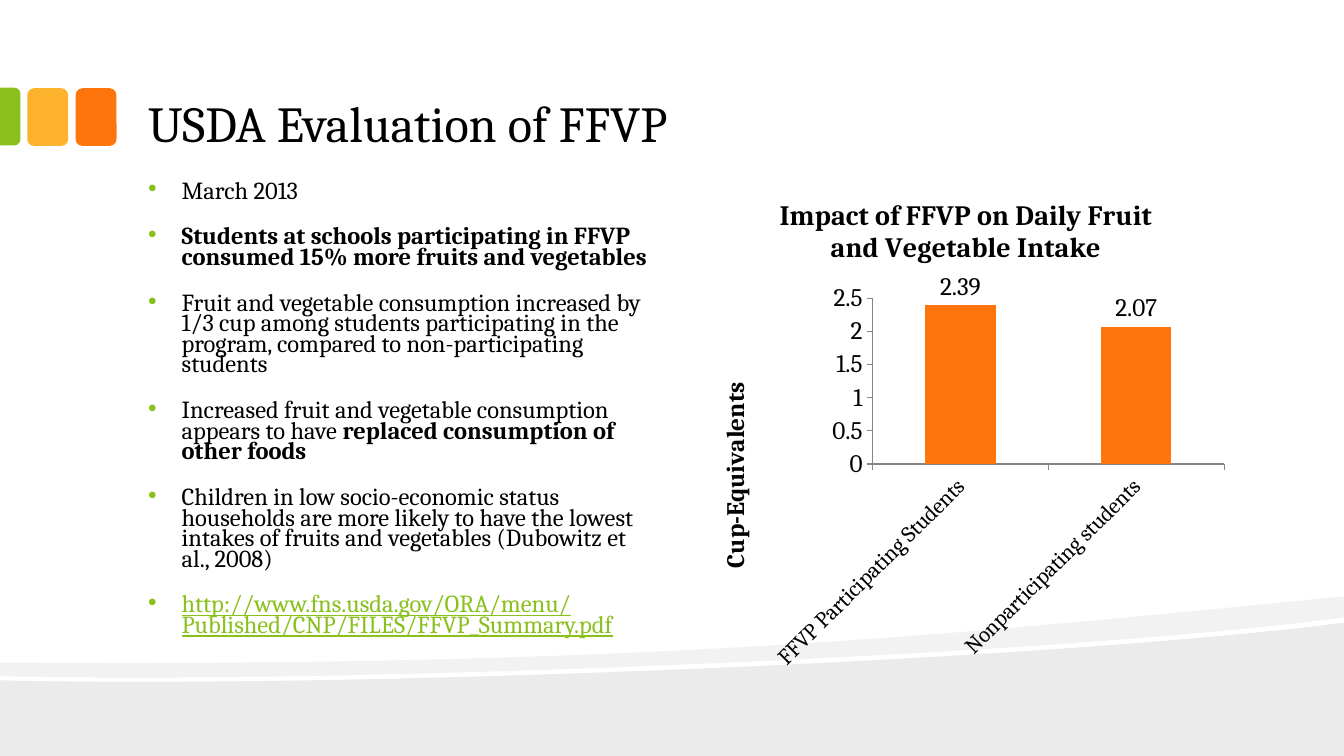
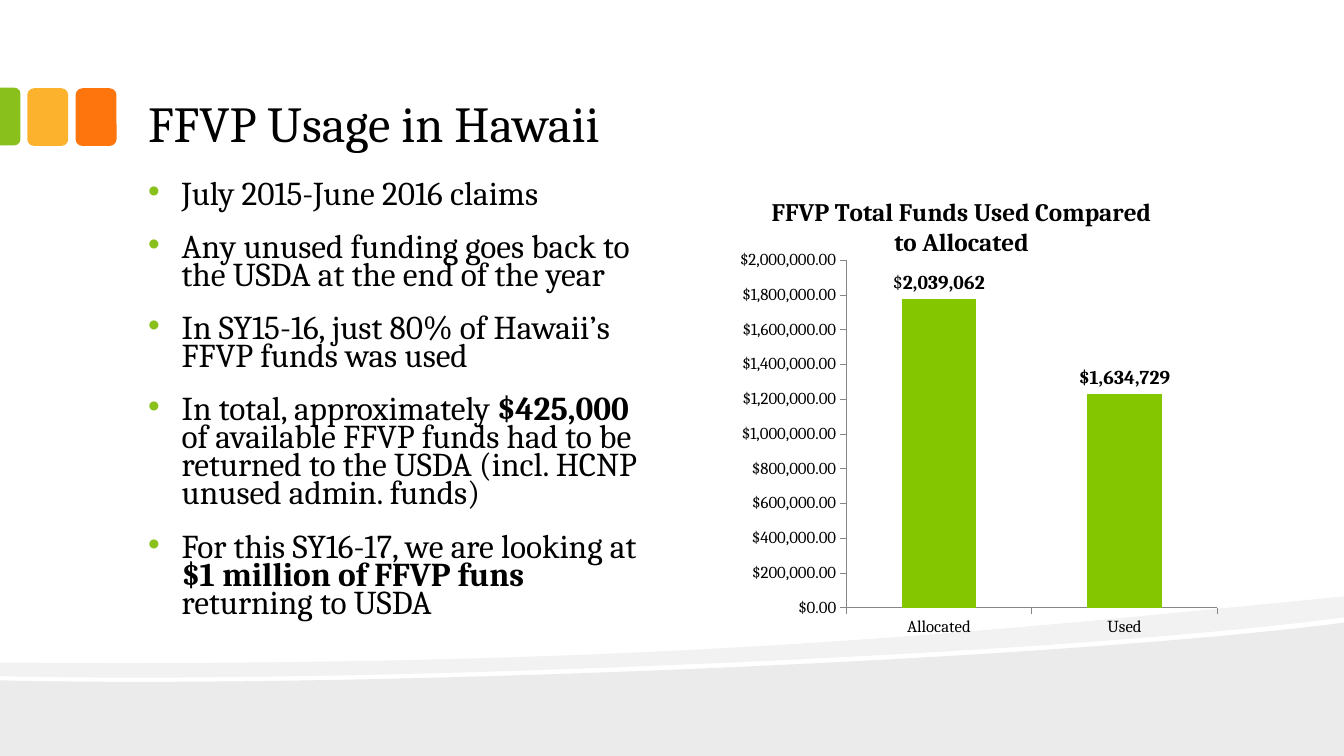
from dataclasses import dataclass

from lxml import etree
from pptx import Presentation, util as u
from pptx.chart.data import CategoryChartData
from pptx.dml.color import RGBColor
from pptx.enum import chart as ch, shapes, text
from pptx.oxml import ns


@dataclass(frozen=True)
class Theme:
    font: str = "Cambria"
    ink: str = "000000"
    axis: str = "868686"
    green: str = "89C01C"
    bright_green: str = "84C600"
    yellow: str = "FCB22C"
    orange: str = "FE750E"
    wave_dark: str = "EBEBEB"
    wave_light: str = "F2F2F2"
    title: float = 36
    chart_title: float = 20
    chart_text: float = 18


T = Theme()
BULLET_INDENT = 32


def px(n):
    return u.Emu(round(n * 9525))


def rgb(color):
    return RGBColor.from_string(color)


# Text
def set_font(font, *, size, color=T.ink, bold=False, underline=False):
    font.name, font.size = T.font, u.Pt(size)
    font.bold, font.underline = bold, underline
    font.color.rgb = rgb(color)


def write(p, content, *, bold=False, **style):
    """Fill a paragraph; parts between ** marks are bold."""
    for i, part in enumerate(content.split("**")):
        if part:
            r = p.add_run()
            r.text = part
            set_font(r.font, bold=bold or i % 2 == 1, **style)


def add_text_box(s, box, anchor):
    tf = s.shapes.add_textbox(*map(px, box)).text_frame
    tf.word_wrap = True
    tf.vertical_anchor = anchor
    tf.margin_left = tf.margin_right = px(13)
    tf.margin_top, tf.margin_bottom = px(6), px(7)
    return tf


def add_bullet(p):
    p.line_spacing, p.space_before = 0.7, u.Pt(18)
    pPr = p._p.get_or_add_pPr()
    pPr.set("marL", str(px(BULLET_INDENT)))
    pPr.set("indent", str(px(-BULLET_INDENT)))
    color = etree.SubElement(pPr, ns.qn("a:buClr"))
    etree.SubElement(color, ns.qn("a:srgbClr"), val=T.green)
    etree.SubElement(pPr, ns.qn("a:buFont"), typeface="Arial")
    etree.SubElement(pPr, ns.qn("a:buChar"), char="•")


def add_bullets(s, items, *, size, height):
    tf = add_text_box(s, (128, 168, 512, height), text.MSO_ANCHOR.TOP)
    for i, item in enumerate(items):
        p = tf.add_paragraph() if i else tf.paragraphs[0]
        add_bullet(p)
        link = item.startswith("http")
        write(p, item, size=size, color=T.green if link else T.ink, underline=link)


# Shared decoration
def paint(sp, color):
    sp.shadow.inherit = False
    sp.fill.solid()
    sp.fill.fore_color.rgb = rgb(color)
    sp.line.fill.background()


def add_wave(s, points, curve_starts, color):
    """Draw an outline; three segments from each curve start form one curve."""
    outline = s.shapes.build_freeform(*map(px, points[0]), scale=1.0)
    outline.add_line_segments([tuple(map(px, q)) for q in points[1:]], close=True)
    sp = outline.convert_to_shape()
    segments = list(sp._element.iter(ns.qn("a:lnTo")))
    for start in curve_starts:
        curve = etree.Element(ns.qn("a:cubicBezTo"))
        segments[start].addprevious(curve)
        for segment in segments[start:start + 3]:
            curve.append(segment[0])
            segment.getparent().remove(segment)
    paint(sp, color)


def add_decoration(s):
    add_wave(s, [(1280, 593), (1280, 720), (0, 720), (0, 648),
                 (338, 656), (1000, 629), (1280, 593)], [3], T.wave_dark)
    add_wave(s, [(1280, 568), (1280, 588), (1205, 598), (1103, 607), (988, 615),
                 (670, 636), (248, 650), (0, 644), (0, 631),
                 (626, 636), (932, 602), (1280, 568)], [1, 4, 8], T.wave_light)
    for left, color in ((72, T.orange), (26, T.yellow)):
        paint(s.shapes.add_shape(shapes.MSO_SHAPE.ROUNDED_RECTANGLE,
                                 *map(px, (left, 84, 39, 55))), color)
    tab = s.shapes.add_shape(shapes.MSO_SHAPE.ROUND_2_SAME_RECTANGLE,
                             *map(px, (-18, 101, 55, 20)))
    tab.rotation = 90
    tab.adjustments[0], tab.adjustments[1] = 0.29, 0
    paint(tab, T.green)


def add_slide(prs, title):
    s = prs.slides.add_slide(prs.slide_layouts[6])
    add_decoration(s)
    tf = add_text_box(s, (128, 16, 1023, 136), text.MSO_ANCHOR.BOTTOM)
    write(tf.paragraphs[0], title, size=T.title)
    return s


# Charts
def set_layout(parent, index, **places):
    """Give a chart part a manual position, in fractions of the chart."""
    for old in parent.findall(ns.qn("c:layout")):
        parent.remove(old)
    layout = etree.Element(ns.qn("c:layout"))
    manual = etree.SubElement(layout, ns.qn("c:manualLayout"))
    if "w" in places:
        etree.SubElement(manual, ns.qn("c:layoutTarget"), val="inner")
    for name in ("xMode", "yMode"):
        etree.SubElement(manual, ns.qn(f"c:{name}"), val="edge")
    for name, value in places.items():
        etree.SubElement(manual, ns.qn(f"c:{name}"), val=str(value))
    parent.insert(index, layout)


def style_axis(axis, size):
    axis.has_major_gridlines = False
    axis.major_tick_mark = ch.XL_TICK_MARK.OUTSIDE
    axis.minor_tick_mark = ch.XL_TICK_MARK.NONE
    axis.format.line.color.rgb = rgb(T.axis)
    axis.format.line.width = u.Pt(0.75)
    set_font(axis.tick_labels.font, size=size)


def add_column_chart(s, box, title, values, *, color, plot, title_size, label_size,
                     axis_sizes, top, step, number_format):
    data = CategoryChartData()
    data.categories = list(values)
    data.add_series("Series 1", list(values.values()))
    chart = s.shapes.add_chart(ch.XL_CHART_TYPE.COLUMN_CLUSTERED,
                               *map(px, box), data).chart
    set_font(chart.font, size=T.chart_text)
    chart.has_legend = False
    chart.has_title = True
    write(chart.chart_title.text_frame.paragraphs[0], title, size=title_size, bold=True)
    fractions = [part / whole for part, whole in zip(plot, box[2:] * 2)]
    set_layout(chart.element.find(".//" + ns.qn("c:plotArea")), 0,
               **dict(zip("xywh", fractions)))

    for axis, size in zip((chart.category_axis, chart.value_axis), axis_sizes):
        style_axis(axis, size)
    axis = chart.value_axis
    axis.minimum_scale, axis.maximum_scale, axis.major_unit = 0, top, step
    axis.tick_labels.number_format = number_format
    axis.tick_labels.number_format_is_linked = False

    bars = chart.plots[0]
    bars.gap_width = 150
    bars.vary_by_categories = False
    fill = bars.series[0].format.fill
    fill.solid()
    fill.fore_color.rgb = rgb(color)
    bars.has_data_labels = True
    labels = bars.data_labels
    labels.show_value = True
    labels.position = ch.XL_LABEL_POSITION.OUTSIDE_END
    set_font(labels.font, size=label_size)
    return chart


def add_axis_title(chart, title):
    axis_title = chart.value_axis.axis_title
    write(axis_title.text_frame.paragraphs[0], title, size=T.chart_text, bold=True)
    set_layout(axis_title.element, 1, x=0.03, y=0.4)


def slant_categories(chart):
    body = chart.element.find("/".join(
        [".//" + ns.qn("c:catAx"), ns.qn("c:txPr"), ns.qn("a:bodyPr")]))
    body.set("rot", "-2700000")
    body.set("vert", "horz")


def relabel_points(chart, captions, size):
    for i, caption in enumerate(captions):
        label = chart.plots[0].series[0].points[i].data_label
        write(label.text_frame.paragraphs[0], caption, size=size)
        label.position = ch.XL_LABEL_POSITION.OUTSIDE_END


# Slides
def add_evaluation(prs):
    s = add_slide(prs, "USDA Evaluation of FFVP")
    add_bullets(s, [
        "March 2013",
        "**Students at schools participating in FFVP consumed 15% more fruits and vegetables**",
        "Fruit and vegetable consumption increased by 1/3 cup among students "
        "participating in the program, compared to non-participating students",
        "Increased fruit and vegetable consumption appears to have "
        "**replaced consumption of other foods**",
        "Children in low socio-economic status households are more likely to have the "
        "lowest intakes of fruits and vegetables (Dubowitz et al., 2008)",
        "http://www.fns.usda.gov/ORA/menu/Published/CNP/FILES/FFVP_Summary.pdf",
    ], size=17.5, height=480)
    chart = add_column_chart(
        s, (664, 168, 512, 480), "Impact of FFVP on Daily Fruit and Vegetable Intake",
        {"FFVP Participating Students": 2.39, "Nonparticipating students": 2.07},
        color=T.orange, plot=(167, 116, 335, 158), title_size=T.chart_title,
        label_size=T.chart_text, axis_sizes=(16, T.chart_text),
        top=2.5, step=0.5, number_format="General")
    add_axis_title(chart, "Cup-Equivalents")
    slant_categories(chart)


def add_usage(prs):
    s = add_slide(prs, "FFVP Usage in Hawaii")
    add_bullets(s, [
        "July 2015-June 2016 claims",
        "Any unused funding goes back to the USDA at the end of the year",
        "In SY15-16, just 80% of Hawaii’s FFVP funds was used",
        "In total, approximately **$425,000 **of available FFVP funds had to be "
        "returned to the USDA (incl. HCNP unused admin. funds)",
        "For this SY16-17, we are looking at **$1 million of FFVP funs** returning to USDA",
    ], size=23.8, height=504)
    chart = add_column_chart(
        s, (672, 168, 488, 456), "FFVP Total Funds Used Compared to Allocated",
        {"Allocated": 1780000, "Used": 1230000},
        color=T.bright_green, plot=(134, 80, 354, 331), title_size=T.chart_text,
        label_size=14, axis_sizes=(12, 12),
        top=2000000, step=200000, number_format="\\$#,##0.00")
    relabel_points(chart, ["$**2,039,062**", "**$1,634,729**"], 14)


def main():
    prs = Presentation()
    prs.slide_width, prs.slide_height = px(1280), px(720)
    add_evaluation(prs)
    add_usage(prs)
    prs.save("out.pptx")


if __name__ == "__main__":
    main()
